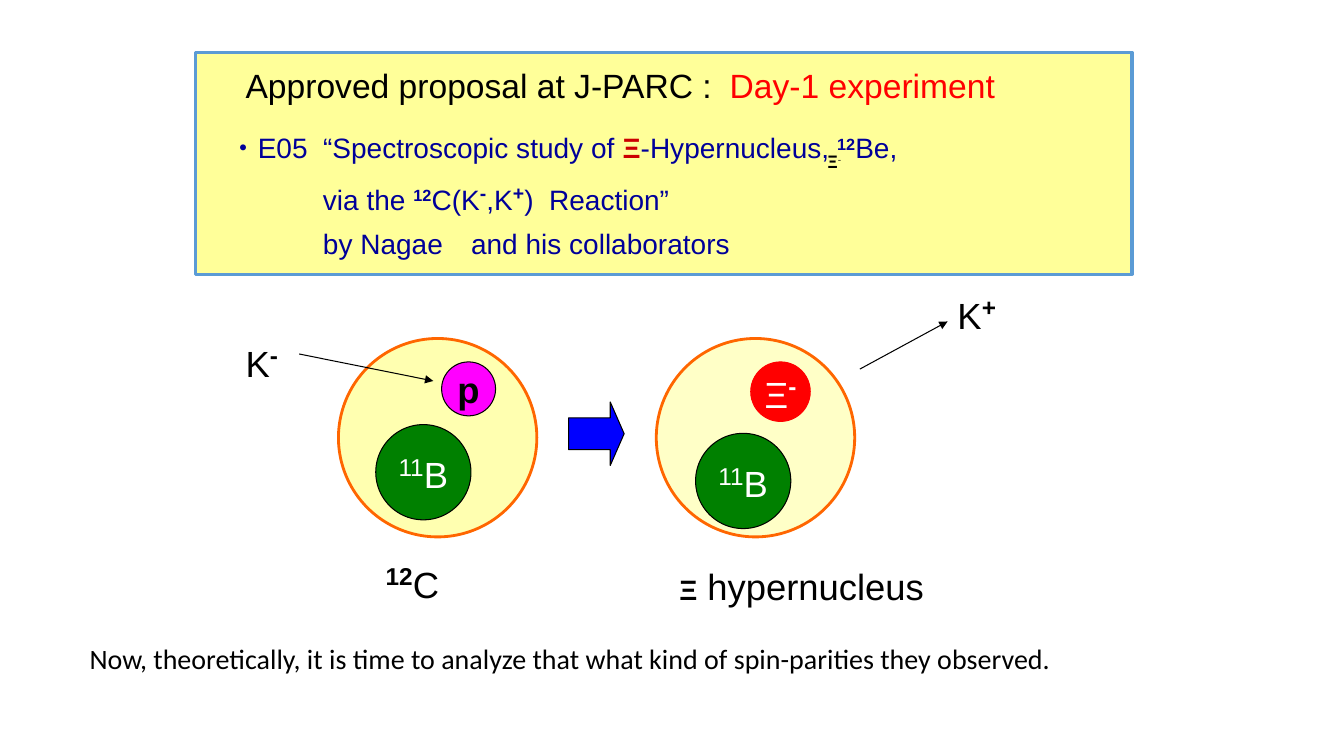
"""Build the slide on the approved Ξ-hypernucleus proposal and its reaction."""
from dataclasses import dataclass

import pptx
import pptx.dml.color
import pptx.enum.shapes
import pptx.enum.text
import pptx.oxml
import pptx.oxml.ns
import pptx.util
from pptx.util import Cm, Pt

BLACK, WHITE, NAVY, RED = "000000", "FFFFFF", "000099", "FF0000"
SHAPES = pptx.enum.shapes.MSO_SHAPE


@dataclass(frozen=True)
class Run:
    text: str
    size: float = 26
    color: str = BLACK
    bold: bool = False
    raised: bool = False
    face: str = "Arial"


@dataclass(frozen=True)
class Line:
    runs: list[Run]
    spacing: float = 1.0
    indent: float = 0


@dataclass(frozen=True)
class Caption:
    left: float
    top: float
    width: float
    height: float
    lines: list[Line]
    wrap: bool = False


@dataclass(frozen=True)
class Ball:
    left: float
    top: float
    diameter: float
    fill: str
    outline: str = BLACK
    weight: float = 0.75
    opacity: int = 100
    label: tuple[Run, ...] = ()


@dataclass(frozen=True)
class Track:
    start: tuple[float, float]
    end: tuple[float, float]


def paint(color_format, color: str) -> None:
    color_format.rgb = pptx.dml.color.RGBColor.from_string(color)


def write(paragraph, text: str, *, size: float, color: str, bold: bool,
          raised: bool, face: str) -> None:
    run = paragraph.add_run()
    run.text = text
    run.font.size = Pt(size)
    run.font.bold = bold
    run.font.name = face
    paint(run.font.color, color)
    if raised:
        run._r.get_or_add_rPr().set("baseline", "30000")


def write_line(paragraph, line: Line) -> None:
    paragraph.line_spacing = line.spacing
    if line.indent:
        properties = paragraph._p.get_or_add_pPr()
        properties.set("marL", str(Cm(line.indent)))
        properties.set("indent", "0")
    for run in line.runs:
        write(paragraph, run.text, size=run.size, color=run.color,
              bold=run.bold, raised=run.raised, face=run.face)


def draw_shape(slide, kind, left: float, top: float, width: float,
               height: float, fill: str, outline: str, weight: float):
    shape = slide.shapes.add_shape(
        kind, Cm(left), Cm(top), Cm(width), Cm(height))
    shape.shadow.inherit = False
    shape.fill.solid()
    paint(shape.fill.fore_color, fill)
    paint(shape.line.color, outline)
    shape.line.width = Pt(weight)
    return shape


def draw_ball(slide, ball: Ball) -> None:
    shape = draw_shape(slide, SHAPES.OVAL, ball.left, ball.top, ball.diameter,
                       ball.diameter, ball.fill, ball.outline, ball.weight)
    if ball.opacity < 100:
        tint = shape._element.spPr.find(
            "/".join(map(pptx.oxml.ns.qn, ("a:solidFill", "a:srgbClr"))))
        tint.append(pptx.oxml.parse_xml(
            f'<a:alpha {pptx.oxml.ns.nsdecls("a")} val="{ball.opacity * 1000}"/>'))
    if ball.label:
        frame = shape.text_frame
        frame.word_wrap = False
        frame.vertical_anchor = pptx.enum.text.MSO_ANCHOR.MIDDLE
        frame.paragraphs[0].alignment = pptx.enum.text.PP_ALIGN.CENTER
        write_line(frame.paragraphs[0], Line(list(ball.label)))


def draw_caption(slide, caption: Caption) -> None:
    box = slide.shapes.add_textbox(Cm(caption.left), Cm(caption.top),
                                   Cm(caption.width), Cm(caption.height))
    frame = box.text_frame
    frame.word_wrap = caption.wrap
    frame.auto_size = pptx.enum.text.MSO_AUTO_SIZE.SHAPE_TO_FIT_TEXT
    for index, line in enumerate(caption.lines):
        write_line(frame.add_paragraph() if index else frame.paragraphs[0], line)


def draw_track(slide, track: Track) -> None:
    arrow = slide.shapes.add_connector(
        pptx.enum.shapes.MSO_CONNECTOR.STRAIGHT,
        *map(Cm, track.start + track.end))
    paint(arrow.line.color, BLACK)
    arrow.line.width = Pt(0.75)
    namespace = pptx.oxml.ns.nsdecls("a")
    arrow.line._get_or_add_ln().append(
        pptx.oxml.parse_xml(f'<a:tailEnd {namespace} type="triangle"/>'))
    arrow._element.spPr.append(pptx.oxml.parse_xml(f"<a:effectLst {namespace}/>"))


BORON = (Run("11", 30, WHITE, raised=True), Run("B", color=WHITE))
PROTON = (Run("p", bold=True),)
XI_MINUS = (Run("Ξ", color=WHITE), Run("-", 30, WHITE, True, True))

BALLS = [
    Ball(16.54, 8.53, 5, "FFFF00", "FF6600", 2, 22),
    Ball(8.53, 8.53, 5, "FFFF00", "FF6600", 2, 31),
    Ball(9.47, 10.7, 2.4, "008000", label=BORON),
    Ball(11.13, 9.12, 1.36, "FF00FF", label=PROTON),
    Ball(18.92, 9.12, 1.5, RED, RED, label=XI_MINUS),
    Ball(17.53, 10.92, 2.4, "008000", label=BORON),
]

TRACKS = [Track((7.54, 8.92), (10.92, 9.6)), Track((21.67, 9.3), (23.88, 8.1))]

PROPOSAL = [
    Line([Run("・E05  “Spectroscopic study of ", 20, NAVY),
          Run("Ξ", 20, "CC0000", True), Run("-Hypernucleus, ", 20, NAVY),
          Run("12", 20, NAVY, True, True), Run("Be,", 20, NAVY)], 1.3),
    Line([Run("via the ", 20, NAVY), Run("12", 20, NAVY, True, True),
          Run("C(K", 20, NAVY), Run("-", 24, NAVY, True, True),
          Run(",K", 20, NAVY), Run("+", 24, NAVY, True, True),
          Run(")  Reaction”", 20, NAVY)], 1.3, 2.35),
    Line([Run("by Nagae\u3000and his collaborators".replace("\u3000", "　"),
              20, NAVY)], 1.3, 2.35),
]

CAPTIONS = [
    Caption(5.94, 8.33, 1.35, 1.35,
            [Line([Run("K"), Run("-", 30, bold=True, raised=True)])]),
    Caption(9.47, 13.89, 1.96, 1.35,
            [Line([Run("12", 30, bold=True, raised=True), Run("C")])]),
    Caption(16.87, 14.1, 6.93, 1.35,
            [Line([Run("Ξ", 20, bold=True), Run(" hypernucleus")])]),
    Caption(5.54, 2.92, 17.81, 3.56, PROPOSAL, True),
    Caption(18.14, 1.52, 7.21, 1.27, [Line([Run("Day-1 experiment", 24, RED)])]),
    Caption(23.88, 7.11, 1.52, 1.35,
            [Line([Run("K"), Run("+", 30, bold=True, raised=True)])]),
    Caption(5.94, 1.52, 20.4, 1.27,
            [Line([Run("Approved proposal at J-PARC :", 24)])], True),
    Caption(20.6, 3.71, 1.07, 0.76,
            [Line([Run("Ξ", 12, bold=True, face="Noto Sans CJK JP"),
                   Run("-", 12, raised=True, face="Noto Sans CJK JP")])]),
    Caption(2.01, 16.05, 24.94, 1.12,
            [Line([Run("Now, theoretically, it is time to analyze that what kind "
                       "of spin-parities they observed.", 20, face="Calibri")])]),
]


def main() -> None:
    deck = pptx.Presentation()
    deck.slide_width, deck.slide_height = Cm(33.87), Cm(19.05)
    slide = deck.slides.add_slide(deck.slide_layouts[6])
    draw_shape(slide, SHAPES.RECTANGLE, 4.93, 1.32, 23.6, 5.59,
               "FFFF99", "5B9BD5", 2.25)
    for ball in BALLS:
        draw_ball(slide, ball)
    reaction = draw_shape(slide, SHAPES.RIGHT_ARROW, 14.33, 10.13, 1.4, 1.6,
                          "0000FF", BLACK, 0.75)
    reaction.adjustments[1] = 0.25
    for track in TRACKS:
        draw_track(slide, track)
    for caption in CAPTIONS:
        draw_caption(slide, caption)
    deck.save("out.pptx")


if __name__ == "__main__":
    main()
